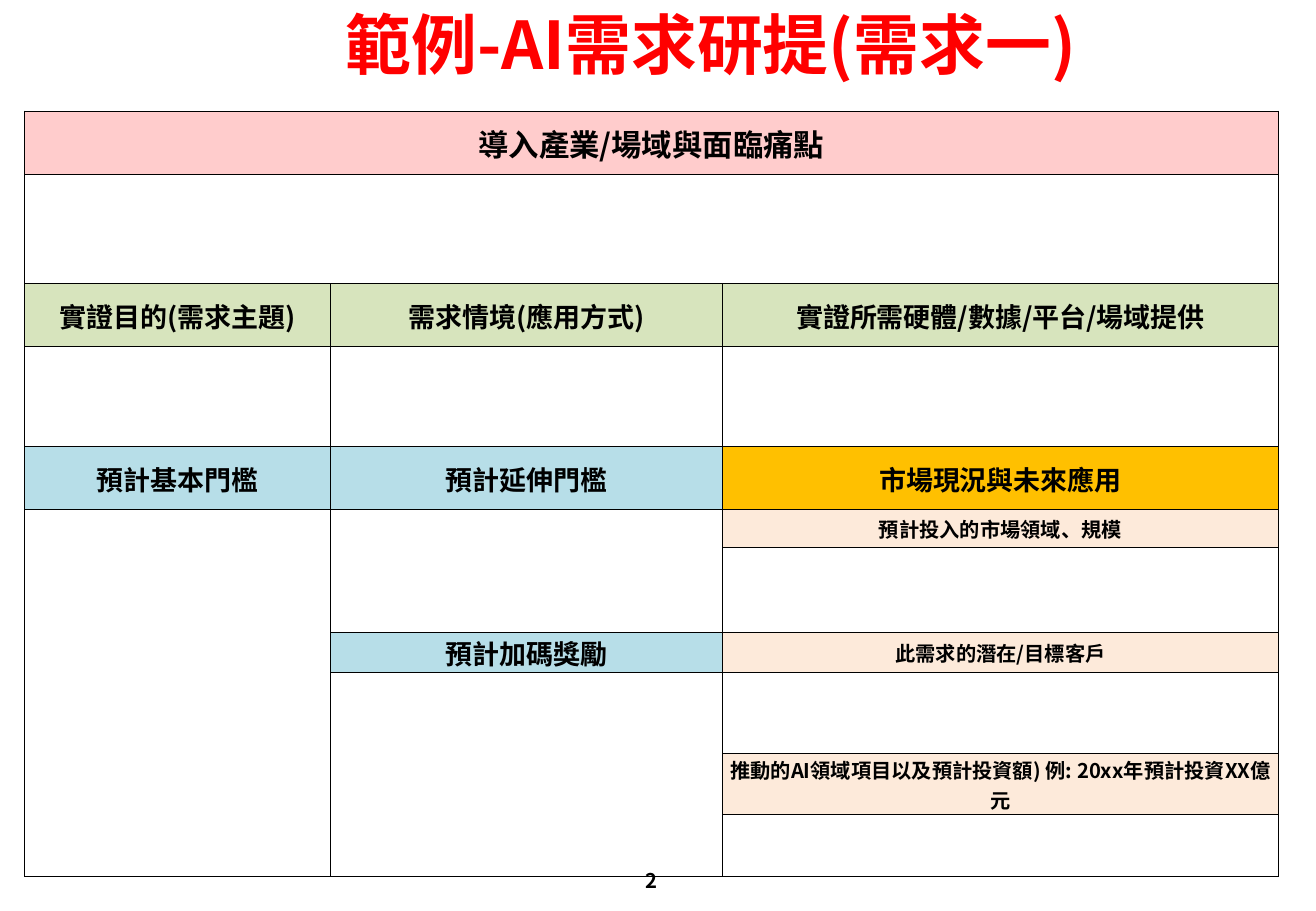
"""Build the AI requirement proposal form slide."""
from lxml.etree import SubElement
from pptx import Presentation
from pptx.dml.color import RGBColor
from pptx.enum.text import MSO_ANCHOR as Anchor, PP_ALIGN as Align
from pptx.oxml.ns import qn
from pptx.util import Cm, Pt

FONT = "Noto Sans CJK SC"
RED = RGBColor(0xFF, 0x00, 0x00)
BLACK = RGBColor(0x00, 0x00, 0x00)
WHITE = RGBColor(0xFF, 0xFF, 0xFF)
PINK = RGBColor(0xFF, 0xCC, 0xCC)
GREEN = RGBColor(0xD7, 0xE4, 0xBD)
BLUE = RGBColor(0xB7, 0xDE, 0xE8)
GOLD = RGBColor(0xFF, 0xC0, 0x00)
PEACH = RGBColor(0xFD, 0xEA, 0xDA)


def write(frame, text, size, color=BLACK):
    paragraph = frame.paragraphs[0]
    paragraph.alignment = Align.CENTER
    run = paragraph.add_run()
    run.text = text
    for key, value in {"name": FONT, "size": Pt(size), "bold": True}.items():
        setattr(run.font, key, value)
    run.font.color.rgb = color
    SubElement(run.font._element, qn("a:ea"), typeface=FONT)


def add_borders(cell):
    properties = cell._tc.get_or_add_tcPr()
    for side in ("lnL", "lnR", "lnT", "lnB"):
        border = SubElement(properties, qn(f"a:{side}"), w=str(Pt(0.5)))
        fill = SubElement(border, qn("a:solidFill"))
        SubElement(fill, qn("a:srgbClr"), val=str(BLACK))


deck = Presentation()
deck.slide_width, deck.slide_height = Cm(27.51), Cm(19.05)
slide = deck.slides.add_slide(deck.slide_layouts[5])

title = slide.shapes.title
title_place = {"left": Cm(3.58), "top": Cm(0.13), "width": Cm(22.56), "height": Cm(2.31)}
for key, value in title_place.items():
    setattr(title, key, value)
title.text_frame.vertical_anchor = Anchor.TOP
write(title.text_frame, "範例-AI需求研提(需求一)", 39, RED)
title.text_frame.paragraphs[0].line_spacing = 0.9

column_widths = [6.4, 8.2, 11.61]
row_heights = [1.32, 2.29, 1.32, 2.08, 1.32, 0.79, 1.78, 0.82, 1.7, 1.25, 1.3]
form = slide.shapes.add_table(
    len(row_heights), len(column_widths), Cm(0.51), Cm(2.32),
    Cm(sum(column_widths)), Cm(sum(row_heights))).table
for flag in ("first_row", "horz_banding"):
    setattr(form, flag, False)
for column, width in zip(form.columns, column_widths):
    column.width = Cm(width)
for row, height in zip(form.rows, row_heights):
    row.height = Cm(height)
for cell in form.iter_cells():
    add_borders(cell)
    cell.fill.solid()
    cell.fill.fore_color.rgb = WHITE

merged_areas = [((0, 0), (0, 2)), ((1, 0), (1, 2)), ((5, 0), (10, 0)),
                ((5, 1), (6, 1)), ((8, 1), (10, 1))]
for first, last in merged_areas:
    form.cell(*first).merge(form.cell(*last))

headings = [
    (0, 0, "導入產業/場域與面臨痛點", 18, PINK),
    (2, 0, "實證目的(需求主題)", 16, GREEN),
    (2, 1, "需求情境(應用方式)", 16, GREEN),
    (2, 2, "實證所需硬體/數據/平台/場域提供", 16, GREEN),
    (4, 0, "預計基本門檻", 16, BLUE),
    (4, 1, "預計延伸門檻", 16, BLUE),
    (4, 2, "市場現況與未來應用", 16, GOLD),
    (5, 2, "預計投入的市場領域、規模", 12, PEACH),
    (7, 1, "預計加碼獎勵", 16, BLUE),
    (7, 2, "此需求的潛在/目標客戶", 12, PEACH),
    (9, 2, "推動的AI領域項目以及預計投資額) 例: 20xx年預計投資XX億元", 12, PEACH),
]
heading_format = {"vertical_anchor": Anchor.MIDDLE, "margin_left": Cm(0.03),
                  "margin_right": Cm(0.03), "margin_top": Cm(0.03), "margin_bottom": 0}
for row, column, text, size, color in headings:
    cell = form.cell(row, column)
    for key, value in heading_format.items():
        setattr(cell, key, value)
    cell.fill.fore_color.rgb = color
    write(cell.text_frame, text, size)

page_number = slide.shapes.add_textbox(Cm(10.41), Cm(17.91), Cm(6.43), Cm(1.02)).text_frame
page_number.word_wrap = True
page_number.vertical_anchor = Anchor.MIDDLE
write(page_number, "2", 12)

deck.save("out.pptx")
